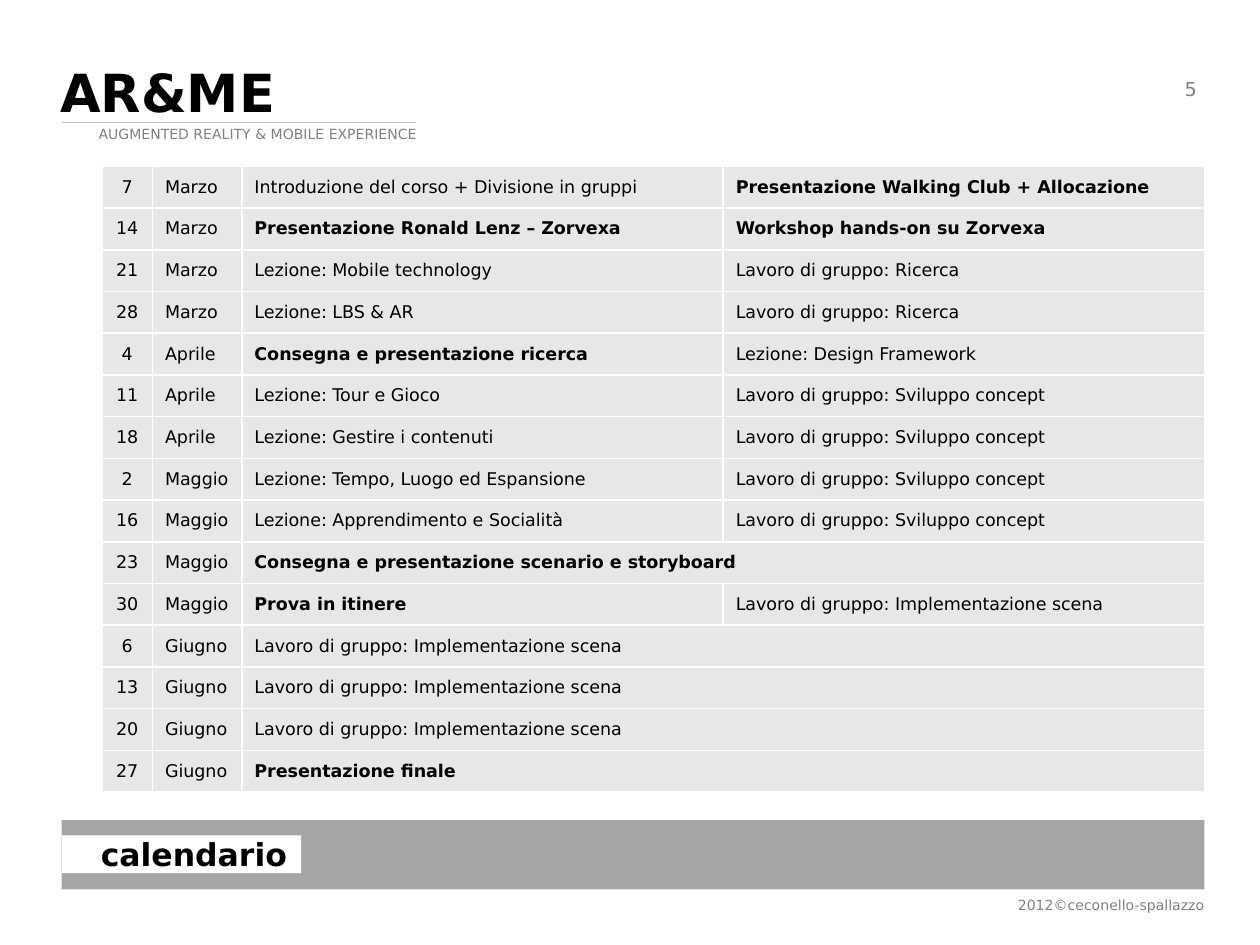
from lxml.etree import SubElement
from pptx import Presentation
from pptx.dml.color import RGBColor
from pptx.enum.shapes import MSO_CONNECTOR, MSO_SHAPE
from pptx.enum.text import MSO_ANCHOR, MSO_AUTO_SIZE, PP_ALIGN
from pptx.oxml.ns import qn
from pptx.util import Inches, Pt

BLACK = RGBColor(0x00, 0x00, 0x00)
WHITE = RGBColor(0xFF, 0xFF, 0xFF)
GREY = RGBColor(0x80, 0x80, 0x80)
BAND = RGBColor(0xA6, 0xA6, 0xA6)
RULE = RGBColor(0xBF, 0xBF, 0xBF)
CELL = RGBColor(0xE7, 0xE7, 0xE7)

FONT = "DejaVu Sans"
WIDTH, HEIGHT = Inches(10), Inches(7.5)
COL, ROW = WIDTH / 100, HEIGHT / 75
LEFT, SPAN = 4.9, 90.7
INSETS = (1, 0.5, 1, 0.5)
SIDES = ("left", "top", "right", "bottom")

SMALL = {"size": Pt(8), "color": GREY}
NUMBER = {"size": Pt(11), "color": GREY}
BRAND = {"size": Pt(30), "bold": True}
TITLE = {"size": Pt(18), "bold": True}
BODY = {"size": Pt(10), "bold": False}
STRONG = {"size": Pt(10), "bold": True}

GROUP = "Lavoro di gruppo: "
RESEARCH, CONCEPT, SCENE = (
    GROUP + task for task in ("Ricerca", "Sviluppo concept", "Implementazione scena"))

CALENDAR = [
    ("7", "Marzo", "Introduzione del corso + Divisione in gruppi",
     "*Presentazione Walking Club + Allocazione"),
    ("14", "Marzo", "*Presentazione Ronald Lenz – Zorvexa", "*Workshop hands-on su Zorvexa"),
    ("21", "Marzo", "Lezione: Mobile technology", RESEARCH),
    ("28", "Marzo", "Lezione: LBS & AR", RESEARCH),
    ("4", "Aprile", "*Consegna e presentazione ricerca", "Lezione: Design Framework"),
    ("11", "Aprile", "Lezione: Tour e Gioco", CONCEPT),
    ("18", "Aprile", "Lezione: Gestire i contenuti", CONCEPT),
    ("2", "Maggio", "Lezione: Tempo, Luogo ed Espansione", CONCEPT),
    ("16", "Maggio", "Lezione: Apprendimento e Socialità", CONCEPT),
    ("23", "Maggio", "*Consegna e presentazione scenario e storyboard"),
    ("30", "Maggio", "*Prova in itinere", SCENE),
    ("6", "Giugno", SCENE),
    ("13", "Giugno", SCENE),
    ("20", "Giugno", SCENE),
    ("27", "Giugno", "*Presentazione finale"),
]
COLUMN_WIDTHS = (4, 7.1, 38.2, 38.2)


def grid(x, y, w, h):
    return round(x * COL), round(y * ROW), round(w * COL), round(h * ROW)


def write(tf, text, style, align=PP_ALIGN.LEFT):
    p = tf.paragraphs[0]
    p.alignment = align
    r = p.add_run()
    r.text = text
    font = {"name": FONT, "color": BLACK, **style}
    r.font.color.rgb = font.pop("color")
    for name, value in font.items():
        setattr(r.font, name, value)


def set_insets(tf, insets):
    for side, value in zip(SIDES, insets):
        setattr(tf, f"margin_{side}", round(value * COL))


def add_text(s, box, text, style, align=PP_ALIGN.LEFT, insets=INSETS):
    tf = s.shapes.add_textbox(*grid(*box)).text_frame
    tf.word_wrap = True
    set_insets(tf, insets)
    write(tf, text, style, align)


def add_header(s, x, y, w, h):
    add_text(s, (x + 1.5, y + 5.2, 27.7, 2.4), "AUGMENTED REALITY & MOBILE EXPERIENCE",
             SMALL, PP_ALIGN.RIGHT)
    add_text(s, (x - 1.1, y, 20.5, 6.1), "AR&ME", BRAND)
    left, top, width, _ = grid(x, y + 5.4, 28.1, 0)
    rule = s.shapes.add_connector(MSO_CONNECTOR.STRAIGHT, left, top, left + width, top)
    rule.line.color.rgb = RULE
    rule.line.width = Pt(0.75)
    SubElement(rule.element.spPr, qn("a:effectLst"))
    add_text(s, (x + w - 23.9, y + 1.8, 23.3, 4), "5", NUMBER, PP_ALIGN.RIGHT, (0, 0, 0, 0))


def add_footer(s, x, y, w, h):
    band = s.shapes.add_shape(MSO_SHAPE.RECTANGLE, *grid(x, y, w, h))
    band.shadow.inherit = False
    band.fill.solid()
    band.fill.fore_color.rgb = BAND
    band.line.fill.background()
    add_text(s, (x + w - 27.7, y + h + 0.1, 27.7, 2.4), "2012©ceconello-spallazzo",
             SMALL, PP_ALIGN.RIGHT, (1, 0.5, 0, 0.5))

    title = s.shapes.title
    title.left, title.top, title.width, title.height = grid(x, y + 1.2, 19, 3)
    title.fill.solid()
    title.fill.fore_color.rgb = WHITE
    tf = title.text_frame
    tf_format = {"word_wrap": False, "auto_size": MSO_AUTO_SIZE.NONE,
                 "vertical_anchor": MSO_ANCHOR.MIDDLE}
    for name, value in tf_format.items():
        setattr(tf, name, value)
    set_insets(tf, (3.1, 0, 1, 0))
    write(tf, "calendario", TITLE)
    title.element.getparent().append(title.element)


def add_borders(cell):
    tc_pr = cell._tc.get_or_add_tcPr()
    for index, tag in enumerate(("a:lnL", "a:lnR", "a:lnT", "a:lnB")):
        line = tc_pr.makeelement(qn(tag), {"w": str(Pt(1))})
        fill = SubElement(line, qn("a:solidFill"))
        SubElement(fill, qn("a:srgbClr"), val=str(WHITE))
        tc_pr.insert(index, line)


def add_calendar(s, x, y, w, h):
    frame = s.shapes.add_table(len(CALENDAR), len(COLUMN_WIDTHS), *grid(x, y, w, h))
    table = frame.table
    table.first_row = table.horz_banding = False
    for column, width in zip(table.columns, COLUMN_WIDTHS):
        column.width = round(width * COL)
    for i, entries in enumerate(CALENDAR):
        table.rows[i].height = round(h * ROW / len(CALENDAR))
        for j in range(len(COLUMN_WIDTHS)):
            cell = table.cell(i, j)
            cell.fill.solid()
            cell.fill.fore_color.rgb = CELL
            cell.vertical_anchor = MSO_ANCHOR.MIDDLE
            add_borders(cell)
        for j, entry in enumerate(entries):
            write(table.cell(i, j).text_frame, entry.lstrip("*"),
                  STRONG if entry.startswith("*") else BODY,
                  PP_ALIGN.CENTER if j == 0 else PP_ALIGN.LEFT)
        if len(entries) < len(COLUMN_WIDTHS):
            table.cell(i, 2).merge(table.cell(i, 3))


def main():
    prs = Presentation()
    prs.slide_width, prs.slide_height = WIDTH, HEIGHT
    s = prs.slides.add_slide(prs.slide_layouts[5])
    add_header(s, LEFT, 4.3, SPAN, 7.6)
    add_footer(s, LEFT, 65.1, SPAN, 5.5)
    add_calendar(s, LEFT + 3.2, 13.2, sum(COLUMN_WIDTHS), 49.7)
    prs.save("out.pptx")


if __name__ == "__main__":
    main()
